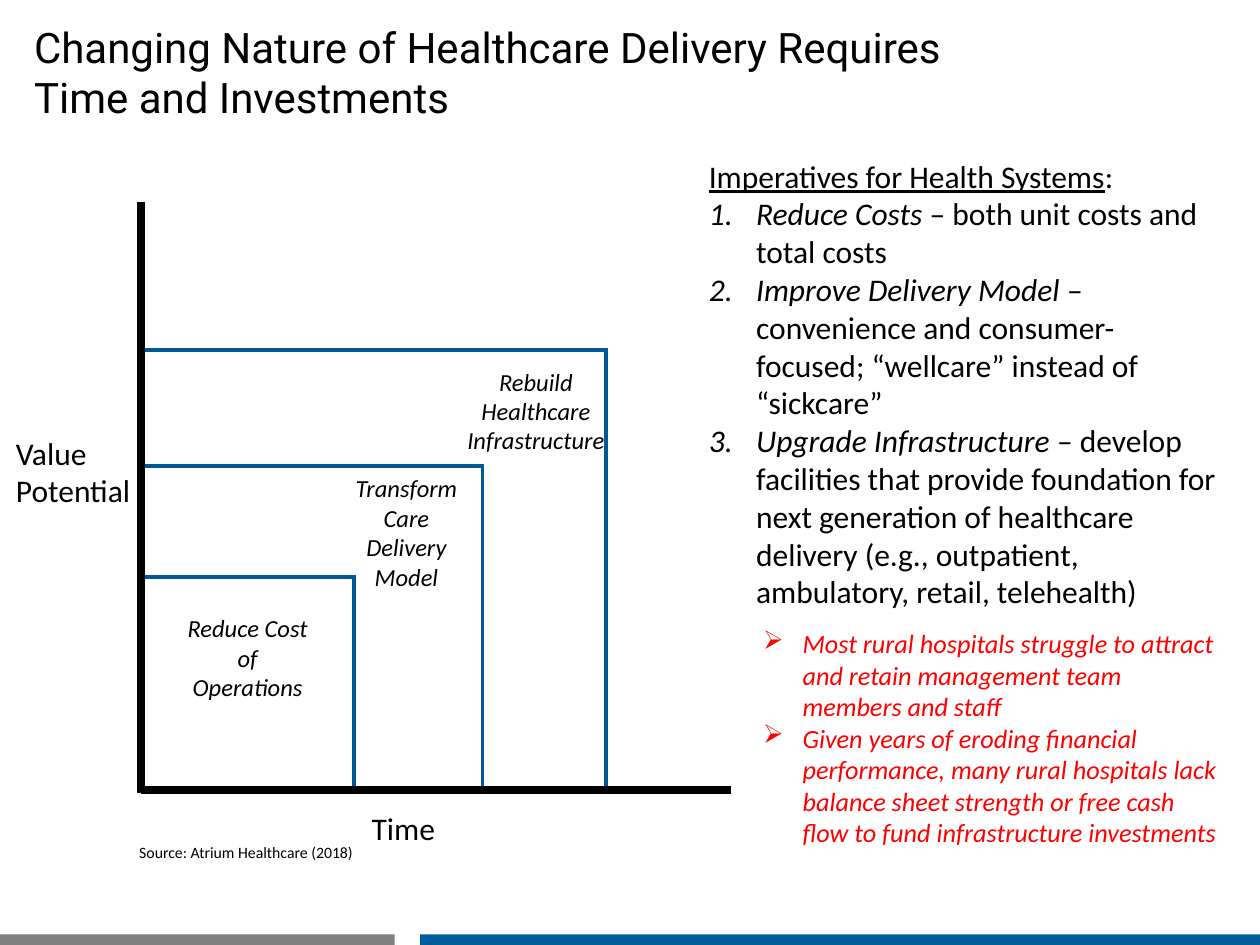
from lxml.etree import SubElement
from pptx import Presentation
from pptx.dml.color import RGBColor
from pptx.enum.shapes import MSO_CONNECTOR as Line, MSO_SHAPE as Shape
from pptx.enum.text import MSO_ANCHOR as Anchor, MSO_AUTO_SIZE as Fit, PP_ALIGN as Align
from pptx.oxml.ns import qn
from pptx.util import Pt

BLACK = RGBColor(0x00, 0x00, 0x00)
BLUE = RGBColor(0x00, 0x59, 0x96)
BAND = RGBColor(0x00, 0x5B, 0x99)
GRAY = RGBColor(0x80, 0x80, 0x80)
RED = RGBColor(0xFF, 0x00, 0x00)

WIDE, HIGH = 720, 540
LEFT, BASE = 80.75, 451.5

STEPS = [(202.25, 329.75), (275.75, 266.5), (346.5, 200)]

LABELS = [
    (98, 347, 87, 58, ["Reduce Cost of Operations"]),
    (188.75, 267, 87, 75, ["Transform Care Delivery Model"]),
    (258.25, 206, 96, 58, ["Rebuild Healthcare", "Infrastructure"]),
]

GOALS = [
    ("Reduce Costs", " – both unit costs and total costs"),
    ("Improve Delivery Model",
     " – convenience and consumer-focused; “wellcare” instead of “sickcare”"),
    ("Upgrade Infrastructure",
     " – develop facilities that provide foundation for next generation of "
     "healthcare delivery (e.g., outpatient, ambulatory, retail, telehealth)"),
]

RISKS = [
    "Most rural hospitals struggle to attract and retain management team "
    "members and staff",
    "Given years of eroding financial performance, many rural hospitals lack "
    "balance sheet strength or free cash flow to fund infrastructure investments",
]


class Deck:
    def __init__(self):
        self.show = Presentation()
        self.show.slide_width, self.show.slide_height = Pt(WIDE), Pt(HIGH)
        self.slide = self.show.slides.add_slide(self.show.slide_layouts[5])
        self.font = "Calibri"

    def run(self, para, text, size, color=BLACK, font=None, **marks):
        run = para.add_run()
        run.text = text
        run.font.name = font or self.font
        run.font.size = Pt(size)
        run.font.color.rgb = color
        for name, value in marks.items():
            setattr(run.font, name, value)

    def title(self, text, x, y, w, h):
        box = self.slide.shapes.title
        box.left, box.top, box.width, box.height = Pt(x), Pt(y), Pt(w), Pt(h)
        frame = box.text_frame
        frame.auto_size = Fit.NONE
        frame.vertical_anchor = Anchor.MIDDLE
        para = frame.paragraphs[0]
        para.alignment = Align.LEFT
        self.run(para, text, 24, font="Roboto")

    def band(self, x, y, w, h, color):
        box = self.slide.shapes.add_shape(Shape.RECTANGLE, Pt(x), Pt(y), Pt(w), Pt(h))
        box.shadow.inherit = False
        box.fill.solid()
        box.fill.fore_color.rgb = color
        box.line.fill.background()

    def line(self, x1, y1, x2, y2, color, width):
        line = self.slide.shapes.add_connector(
            Line.STRAIGHT, Pt(x1), Pt(y1), Pt(x2), Pt(y2))
        line.line.color.rgb = color
        line.line.width = Pt(width)
        SubElement(line._element.spPr, qn("a:effectLst"))

    def text(self, x, y, w, h, paras, size, color=BLACK, align=Align.LEFT,
             bullets=None, indent=0):
        box = self.slide.shapes.add_textbox(Pt(x), Pt(y), Pt(w), Pt(h))
        frame = box.text_frame
        frame.word_wrap = True
        frame.auto_size = Fit.SHAPE_TO_FIT_TEXT
        marks = bullets or [None] * len(paras)
        for i, (runs, mark) in enumerate(zip(paras, marks)):
            para = frame.add_paragraph() if i else frame.paragraphs[0]
            para.alignment = align
            if mark:
                self.bullet(para, mark, indent)
            for text, style in runs:
                self.run(para, text, size, color, **style)

    def bullet(self, para, mark, indent):
        props = para._p.get_or_add_pPr()
        props.set("marL", str(Pt(indent)))
        props.set("indent", str(-Pt(indent)))
        if mark == "1.":
            SubElement(props, qn("a:buAutoNum"), type="arabicPeriod")
        else:
            SubElement(props, qn("a:buChar"), char=mark)


def main():
    deck = Deck()
    plain, slant, under = {}, {"italic": True}, {"underline": True}

    deck.title("Changing Nature of Healthcare Delivery Requires Time and Investments",
               12.25, 23, 574.5, 36)
    deck.band(240, 534, 480, 6, BAND)
    deck.band(0, 534, 225.5, 6, GRAY)

    for right, top in STEPS:
        deck.line(LEFT, top, right + 1, top, BLUE, 2.25)
        deck.line(right, BASE, right, top, BLUE, 2.25)
    deck.line(LEFT, 115.25, LEFT, BASE + 1.5, BLACK, 4.5)
    deck.line(418, BASE, LEFT, BASE, BLACK, 4.5)

    for x, y, w, h, rows in LABELS:
        deck.text(x, y, w, h, [[(row, slant)] for row in rows], 14, align=Align.CENTER)

    deck.text(2, 244.25, 87, 51, [[("Value Potential", plain)]], 18)
    deck.text(205.25, 458.75, 87, 29, [[("Time", plain)]], 18)
    deck.text(72.5, 478, 265.5, 18, [[("Source: Atrium Healthcare (2018)", plain)]], 9)

    head = [("Imperatives for Health Systems", under), (":", plain)]
    goals = [[(name, slant), (rest, plain)] for name, rest in GOALS]
    deck.text(398, 86, 307.5, 269, [head] + goals, 18,
              bullets=[None] + ["1."] * len(goals), indent=27)
    deck.text(429, 355, 276, 134.5, [[(risk, slant)] for risk in RISKS], 15, RED,
              bullets=["➢"] * len(RISKS), indent=22.5)

    deck.show.save("out.pptx")


if __name__ == "__main__":
    main()
